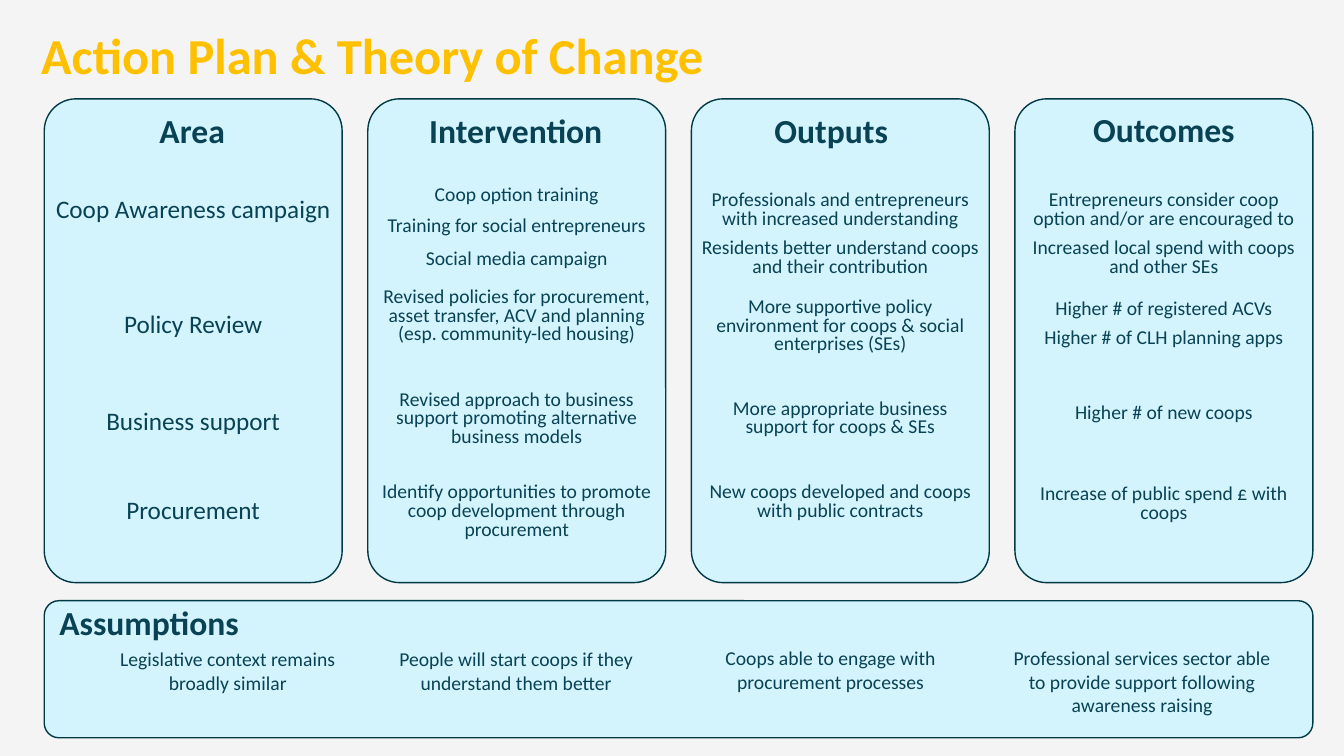
from dataclasses import dataclass

from pptx import Presentation
from pptx.dml.color import RGBColor
from pptx.enum.shapes import MSO_SHAPE
from pptx.enum.text import MSO_ANCHOR, MSO_AUTO_SIZE, PP_ALIGN
from pptx.slide import Slide
from pptx.util import Pt

FONT = "Calibri"
BACKGROUND, PANEL_FILL, PANEL_LINE = "F4F4F4", "D3F4FD", "013947"
TEXT_COLOR, TITLE_COLOR = "084254", "FFC000"

LEFT, COLUMN_PITCH, COLUMN_WIDTH = 31.6, 231.12, 212.8
COLUMN_TOP, COLUMN_HEIGHT = 70.6, 345.6
ASSUMPTIONS_TOP, ASSUMPTIONS_HEIGHT = 429.1, 97.9
ASSUMPTION_WIDTH = 200.2
CORNER = 0.107


@dataclass
class Entry:
    top: float
    text: str
    lines: int = 1


@dataclass
class Column:
    heading: str
    entries: list[Entry]
    size: float = 14
    heading_top: float = 80.6
    heading_shift: float = 0


@dataclass
class Assumption:
    left: float
    top: float
    text: str
    lines: int = 2


COLUMNS = [
    Column("Area", [
        Entry(139, "Coop Awareness campaign", 2),
        Entry(221, "Policy Review"),
        Entry(290.2, "Business support"),
        Entry(353.5, "Procurement"),
    ], size=18, heading_shift=-0.7),
    Column("Intervention", [
        Entry(129.6, "Coop option training"),
        Entry(151.9, "Training for social entrepreneurs"),
        Entry(175, "Social media campaign"),
        Entry(202.3, "Revised policies for procurement, asset transfer, ACV and planning "
                     "(esp. community-led housing)", 4),
        Entry(275.8, "Revised approach to business support promoting alternative "
                     "business models", 3),
        Entry(342, "Identify opportunities to promote coop development through "
                   "procurement", 3),
    ], heading_shift=-0.7),
    Column("Outputs", [
        Entry(133.2, "Professionals and entrepreneurs with increased understanding", 2),
        Entry(167.8, "Residents better understand coops and their contribution", 2),
        Entry(209.5, "More supportive policy environment for coops & social "
                     "enterprises (SEs)", 3),
        Entry(282.2, "More appropriate business support for coops & SEs", 2),
        Entry(342, "New coops developed and coops with public contracts", 2),
    ], heading_shift=-6.5),
    Column("Outcomes", [
        Entry(133.2, "Entrepreneurs consider coop option and/or are encouraged to", 2),
        Entry(167.8, "Increased local spend with coops and other SEs", 2),
        Entry(211, "Higher # of registered ACVs"),
        Entry(231.8, "Higher # of CLH planning apps"),
        Entry(285.1, "Higher # of new coops"),
        Entry(343.4, "Increase of public spend £ with coops", 2),
    ], heading_top=79.9),
]

ASSUMPTIONS = [
    Assumption(62.6, 458.6, "Legislative context remains broadly similar"),
    Assumption(268.6, 458.6, "People will start coops if they understand them better"),
    Assumption(493.2, 457.9, "Coops able to engage with procurement processes"),
    Assumption(715.7, 457.9, "Professional services sector able to provide support "
                             "following awareness raising", 3),
]


def color(value: str) -> RGBColor:
    return RGBColor.from_string(value)


def add_panel(slide: Slide, left: float, top: float, width: float, height: float) -> None:
    panel = slide.shapes.add_shape(
        MSO_SHAPE.ROUNDED_RECTANGLE, Pt(left), Pt(top), Pt(width), Pt(height))
    panel.adjustments[0] = CORNER
    panel.shadow.inherit = False
    panel.fill.solid()
    panel.fill.fore_color.rgb = color(PANEL_FILL)
    panel.line.color.rgb = color(PANEL_LINE)
    panel.line.width = Pt(1)


def add_label(slide: Slide, left: float, top: float, width: float, text: str, size: float,
              lines: int = 1, spacing: float = 0.8, bold: bool = False,
              align: PP_ALIGN = PP_ALIGN.CENTER, text_color: str = TEXT_COLOR):
    height = 7.2 + lines * size * 1.22 * spacing
    label = slide.shapes.add_textbox(Pt(left), Pt(top), Pt(width), Pt(height))
    frame = label.text_frame
    frame.word_wrap = True
    frame.auto_size = MSO_AUTO_SIZE.SHAPE_TO_FIT_TEXT
    paragraph = frame.paragraphs[0]
    paragraph.alignment = align
    paragraph.line_spacing = spacing
    run = paragraph.add_run()
    run.text = text
    run.font.name = FONT
    run.font.size = Pt(size)
    run.font.bold = bold
    run.font.color.rgb = color(text_color)
    return label


def add_title(slide: Slide) -> None:
    title = add_label(slide, 22.3, 12.2, 828, "Action Plan & Theory of Change", 36,
                      spacing=0.9, bold=True, align=PP_ALIGN.LEFT, text_color=TITLE_COLOR)
    title.text_frame.auto_size = MSO_AUTO_SIZE.NONE
    title.text_frame.vertical_anchor = MSO_ANCHOR.MIDDLE
    title.height = Pt(58.3)


def add_column(slide: Slide, index: int, column: Column) -> None:
    left = LEFT + index * COLUMN_PITCH
    add_panel(slide, left, COLUMN_TOP, COLUMN_WIDTH, COLUMN_HEIGHT)
    add_label(slide, left + column.heading_shift, column.heading_top, COLUMN_WIDTH,
              column.heading, 24, bold=True)
    for entry in column.entries:
        add_label(slide, left, entry.top, COLUMN_WIDTH, entry.text, column.size, entry.lines)


def add_assumptions(slide: Slide) -> None:
    width = (len(COLUMNS) - 1) * COLUMN_PITCH + COLUMN_WIDTH
    add_panel(slide, LEFT, ASSUMPTIONS_TOP, width, ASSUMPTIONS_HEIGHT)
    add_label(slide, 35.3, 432, COLUMN_WIDTH, "Assumptions", 24, bold=True,
              align=PP_ALIGN.LEFT)
    for assumption in ASSUMPTIONS:
        add_label(slide, assumption.left, assumption.top, ASSUMPTION_WIDTH,
                  assumption.text, 14, assumption.lines, spacing=1)


def main() -> None:
    presentation = Presentation()
    presentation.slide_width, presentation.slide_height = Pt(960), Pt(540)
    slide = presentation.slides.add_slide(presentation.slide_layouts[6])
    slide.background.fill.solid()
    slide.background.fill.fore_color.rgb = color(BACKGROUND)
    add_title(slide)
    for index, column in enumerate(COLUMNS):
        add_column(slide, index, column)
    add_assumptions(slide)
    presentation.save("out.pptx")


if __name__ == "__main__":
    main()
